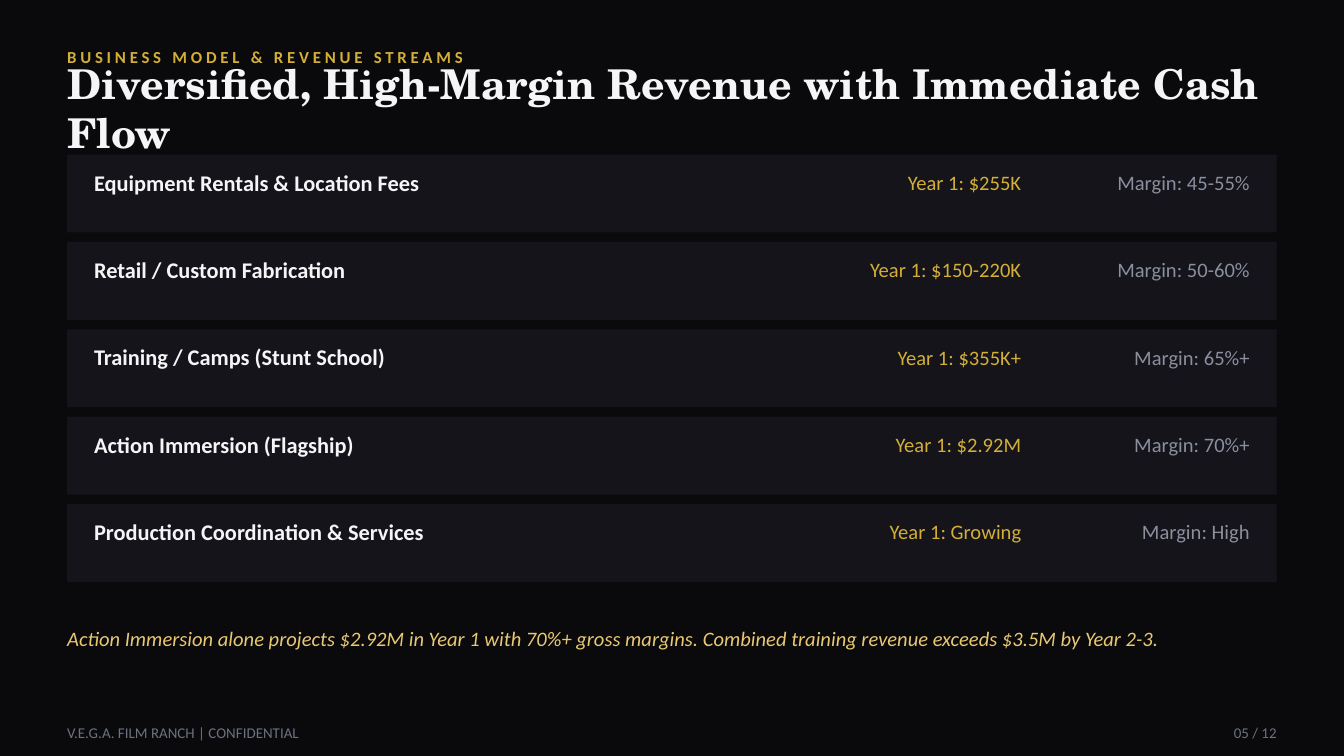
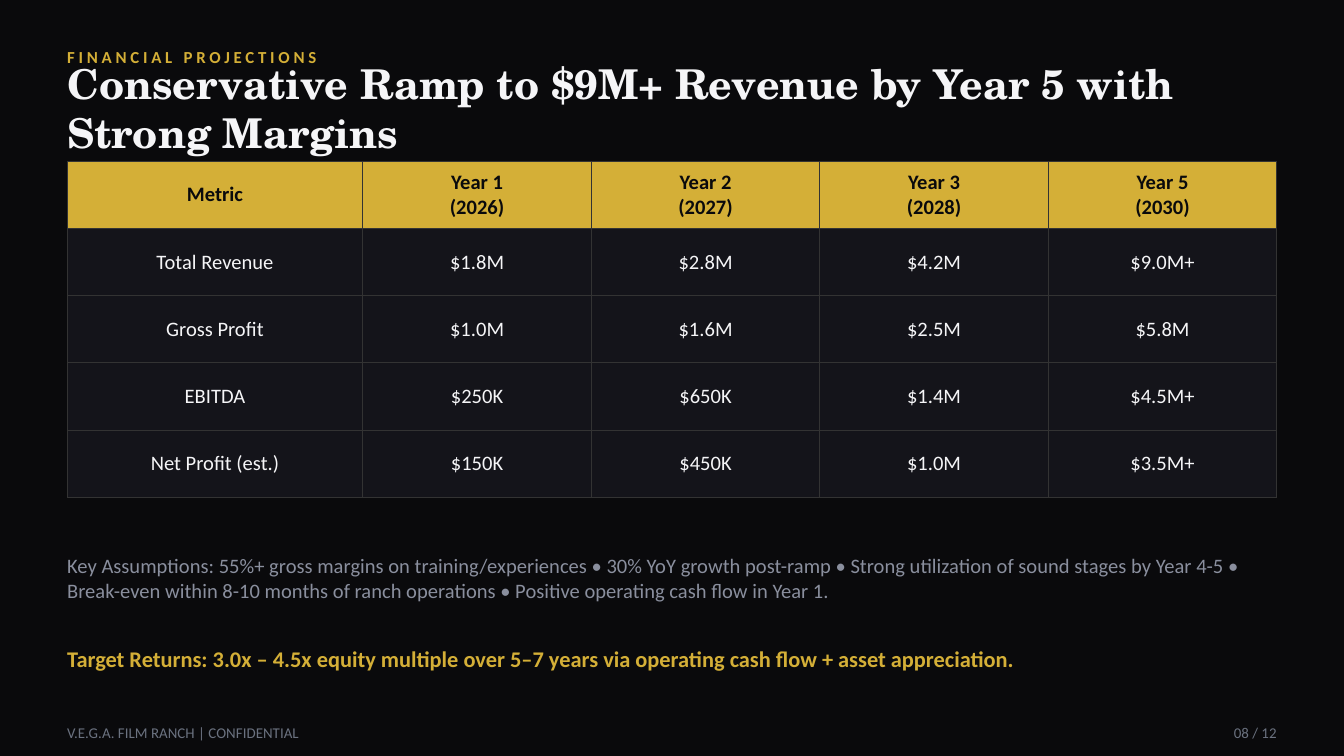
from lxml import etree
from pptx import Presentation
from pptx import util as u
from pptx.dml.color import RGBColor
from pptx.enum import shapes, text
from pptx.oxml import ns

PX = u.Inches(1) // 200
LEFT, WIDTH = 100, 1800
BODY_FONT, TITLE_FONT = "Calibri", "TeX Gyre Schola"

INK = RGBColor(0x0A, 0x0A, 0x0C)
PANEL = RGBColor(0x14, 0x14, 0x1A)
GOLD = RGBColor(0xD4, 0xAF, 0x37)
PALE_GOLD = RGBColor(0xE8, 0xC8, 0x72)
WHITE = RGBColor(0xF5, 0xF5, 0xF7)
GREY = RGBColor(0x8A, 0x8F, 0x9E)
FOOTER_GREY = RGBColor(0x6B, 0x72, 0x80)
GRID = RGBColor(0x33, 0x33, 0x33)

ALIGN = text.PP_ALIGN
MIDDLE = text.MSO_ANCHOR.MIDDLE


def write(frame, words, color, align=ALIGN.LEFT, spacing=None, **style):
    frame.text = words
    for paragraph in frame.paragraphs:
        paragraph.alignment = align
        for run in paragraph.runs:
            run.font.color.rgb = color
            for name, value in {"name": BODY_FONT, "size": u.Pt(11), **style}.items():
                setattr(run.font, name, value)
            if spacing:
                run.font._element.set("spc", str(spacing))


def label(slide, box, words, color, **style):
    frame = slide.shapes.add_textbox(*[side * PX for side in box]).text_frame
    layout = {"word_wrap": True, "vertical_anchor": MIDDLE, "margin_left": 0,
              "margin_top": 0, "margin_right": 0, "margin_bottom": 0}
    for name, value in layout.items():
        setattr(frame, name, value)
    write(frame, words, color, **style)


deck = Presentation()
deck.slide_width, deck.slide_height = 2000 * PX, 1125 * PX

headings = [
    ("BUSINESS MODEL & REVENUE STREAMS",
     "Diversified, High-Margin Revenue with Immediate Cash Flow", "05 / 12"),
    ("FINANCIAL PROJECTIONS",
     "Conservative Ramp to $9M+ Revenue by Year 5 with Strong Margins", "08 / 12"),
]
for section, headline, page in headings:
    slide = deck.slides.add_slide(deck.slide_layouts[6])
    slide.background.fill.solid()
    slide.background.fill.fore_color.rgb = INK
    label(slide, (LEFT, 60, WIDTH, 50), section, GOLD, size=u.Pt(9), bold=True, spacing=200)
    label(slide, (LEFT, 110, WIDTH, 100), headline, WHITE,
          name=TITLE_FONT, size=u.Pt(22), bold=True)
    label(slide, (LEFT, 1070, 1200, 40), "V.E.G.A. FILM RANCH | CONFIDENTIAL",
          FOOTER_GREY, size=u.Pt(8))
    label(slide, (1700, 1070, 200, 40), page, FOOTER_GREY, align=ALIGN.RIGHT, size=u.Pt(8))

revenue, projections = deck.slides

streams = [
    ("Equipment Rentals & Location Fees", "$255K", "45-55%"),
    ("Retail / Custom Fabrication", "$150-220K", "50-60%"),
    ("Training / Camps (Stunt School)", "$355K+", "65%+"),
    ("Action Immersion (Flagship)", "$2.92M", "70%+"),
    ("Production Coordination & Services", "Growing", "High"),
]
for index, (stream, first_year, margin) in enumerate(streams):
    top = 230 + 130 * index
    band = revenue.shapes.add_shape(
        shapes.MSO_SHAPE.RECTANGLE, LEFT * PX, top * PX, WIDTH * PX, 116 * PX)
    band.shadow.inherit = False
    band.fill.solid()
    band.fill.fore_color.rgb = PANEL
    band.line.fill.background()
    label(revenue, (140, top + 16, 1000, 50), stream, WHITE, size=u.Pt(12), bold=True)
    label(revenue, (1160, top + 16, 360, 50), f"Year 1: {first_year}", GOLD, align=ALIGN.RIGHT)
    label(revenue, (1540, top + 16, 320, 50), f"Margin: {margin}", GREY, align=ALIGN.RIGHT)

label(revenue, (LEFT, 900, WIDTH, 100),
      "Action Immersion alone projects $2.92M in Year 1 with 70%+ gross margins. "
      "Combined training revenue exceeds $3.5M by Year 2-3.", PALE_GOLD, italic=True)

metrics = [
    ("Metric", "Year 1\n(2026)", "Year 2\n(2027)", "Year 3\n(2028)", "Year 5\n(2030)"),
    ("Total Revenue", "$1.8M", "$2.8M", "$4.2M", "$9.0M+"),
    ("Gross Profit", "$1.0M", "$1.6M", "$2.5M", "$5.8M"),
    ("EBITDA", "$250K", "$650K", "$1.4M", "$4.5M+"),
    ("Net Profit (est.)", "$150K", "$450K", "$1.0M", "$3.5M+"),
]
forecast = projections.shapes.add_table(
    len(metrics), len(metrics[0]), LEFT * PX, 240 * PX, WIDTH * PX, 500 * PX).table
for column, width in zip(forecast.columns, (440, 340, 340, 340, 340)):
    column.width = width * PX
for row, values in enumerate(metrics):
    forecast.rows[row].height = 100 * PX
    header = row == 0
    for col, value in enumerate(values):
        cell = forecast.cell(row, col)
        cell.vertical_anchor = MIDDLE
        write(cell.text_frame, value, INK if header else WHITE,
              align=ALIGN.CENTER, bold=header)
        cell.fill.solid()
        cell.fill.fore_color.rgb = GOLD if header else PANEL
        properties = cell._tc.get_or_add_tcPr()
        for position, side in enumerate(("lnL", "lnR", "lnT", "lnB")):
            border = etree.Element(ns.qn(f"a:{side}"), w=str(u.Pt(0.5)))
            paint = etree.SubElement(border, ns.qn("a:solidFill"))
            etree.SubElement(paint, ns.qn("a:srgbClr"), val=str(GRID))
            properties.insert(position, border)

label(projections, (LEFT, 780, WIDTH, 160),
      "Key Assumptions: 55%+ gross margins on training/experiences • "
      "30% YoY growth post-ramp • Strong utilization of sound stages by Year 4-5 • "
      "Break-even within 8-10 months of ranch operations • "
      "Positive operating cash flow in Year 1.", GREY)
label(projections, (LEFT, 940, WIDTH, 80),
      "Target Returns: 3.0x – 4.5x equity multiple over 5–7 years "
      "via operating cash flow + asset appreciation.", GOLD, size=u.Pt(12), bold=True)

deck.save("out.pptx")
